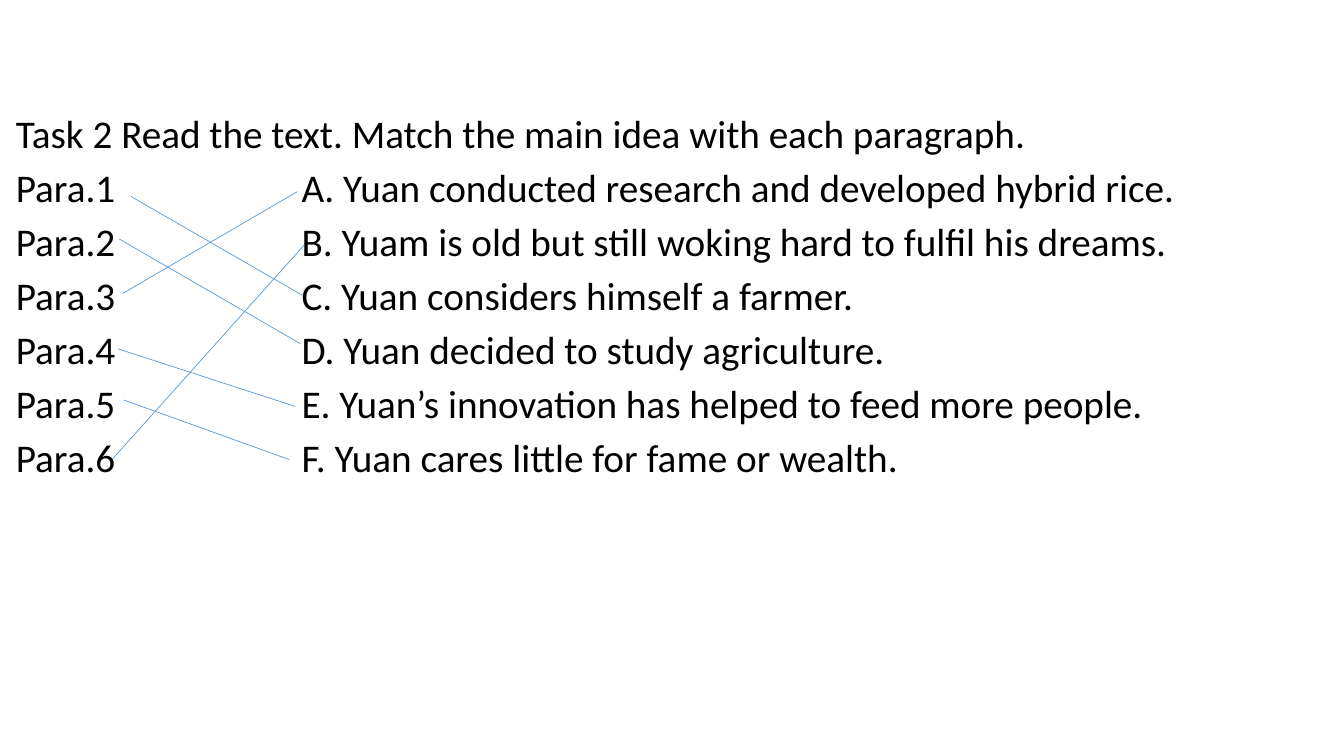
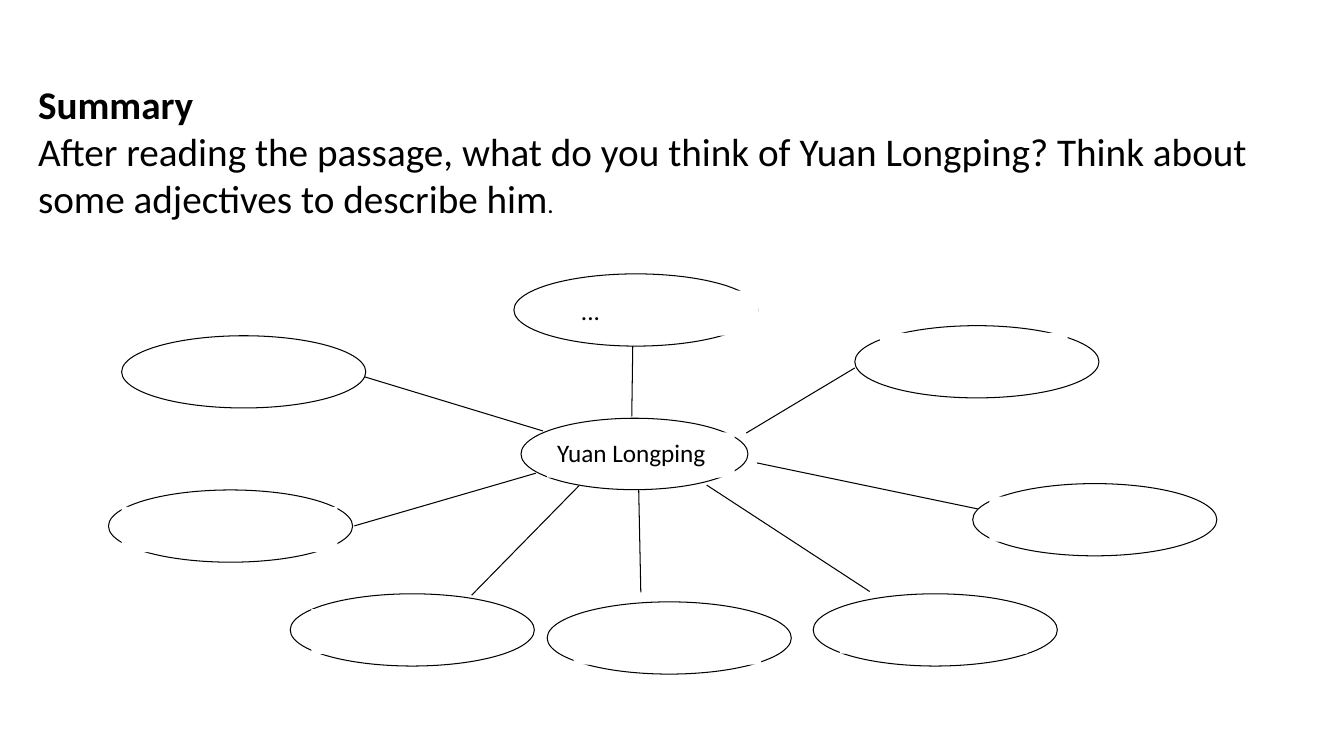
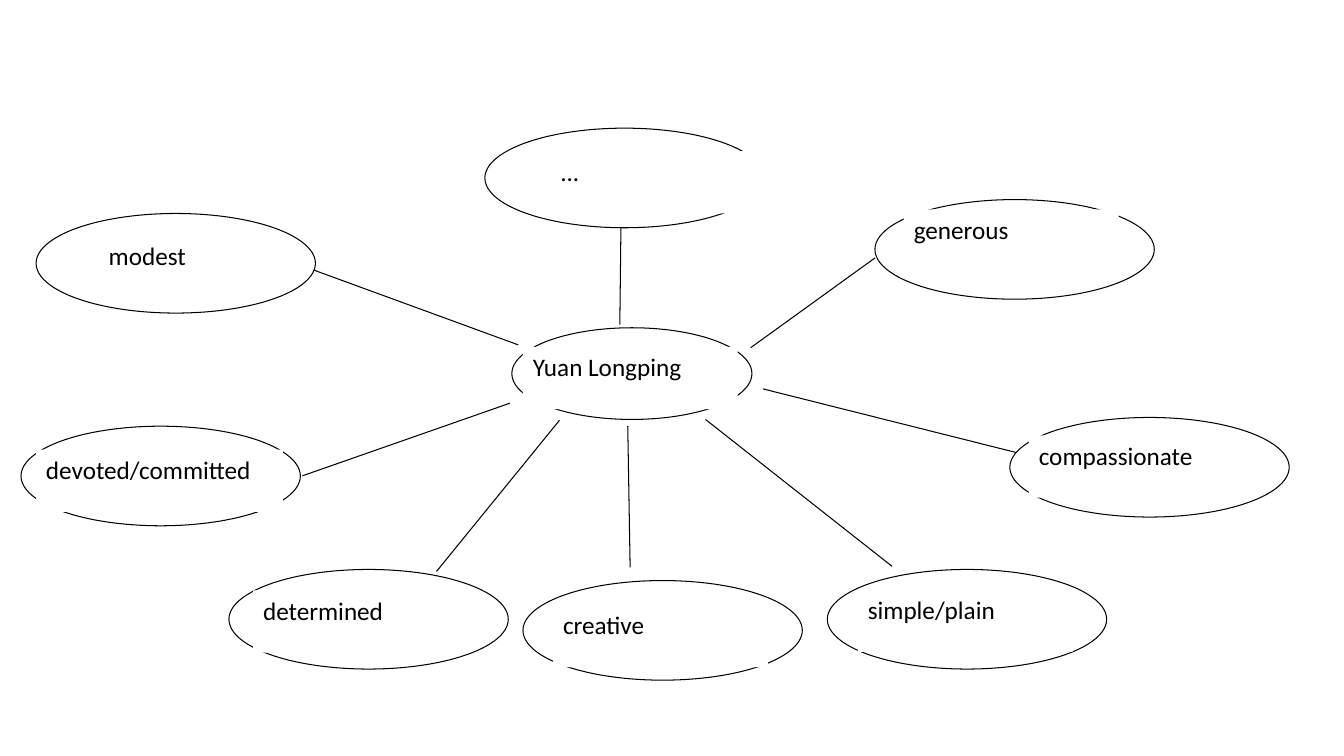
"""Build three lesson slides: a matching task, a blank word web and the completed web."""
import pptx
import pptx.dml.color
import pptx.enum.shapes
import pptx.enum.text
import pptx.oxml
import pptx.oxml.ns
import pptx.util

Cm = pptx.util.Cm
Pt = pptx.util.Pt
BLACK = pptx.dml.color.RGBColor(0x00, 0x00, 0x00)
WHITE = pptx.dml.color.RGBColor(0xFF, 0xFF, 0xFF)
BLUE = pptx.dml.color.RGBColor(0x5B, 0x9B, 0xD5)
DRAWING = pptx.oxml.ns.nsdecls("a")
OVAL = pptx.enum.shapes.MSO_SHAPE.OVAL
RECTANGLE = pptx.enum.shapes.MSO_SHAPE.RECTANGLE

BODY = {"name": "Calibri", "size": Pt(28), "bold": False}
HEADING = BODY | {"bold": True}
LABEL = BODY | {"size": Pt(18)}
TEXT_BOX = {
    "word_wrap": True,
    "auto_size": pptx.enum.text.MSO_AUTO_SIZE.SHAPE_TO_FIT_TEXT,
}
LABEL_FRAME = {"word_wrap": True, "vertical_anchor": pptx.enum.text.MSO_ANCHOR.TOP}


def write(paragraph, text, style):
    """Add a black left-aligned run in the given style."""
    paragraph.alignment = pptx.enum.text.PP_ALIGN.LEFT
    run = paragraph.add_run()
    run.text = text
    run.font.color.rgb = BLACK
    for name, value in style.items():
        setattr(run.font, name, value)


def add_line(slide, ends, color, width):
    """Draw a straight line between two points given in centimetres."""
    line = slide.shapes.add_connector(
        pptx.enum.shapes.MSO_CONNECTOR.STRAIGHT, *[Cm(value) for value in ends]
    )
    line.line.color.rgb = color
    line.line.width = Pt(width)
    line._element.spPr.append(pptx.oxml.parse_xml(f"<a:effectLst {DRAWING}/>"))


presentation = pptx.Presentation()
presentation.slide_width = Cm(33.87)
presentation.slide_height = Cm(19.05)
matching, summary, answers = [
    presentation.slides.add_slide(presentation.slide_layouts[6]) for _ in range(3)
]

ideas = [
    "A. Yuan conducted research and developed hybrid rice.",
    "B. Yuam is old but still woking hard to fulfil his dreams.",
    "C. Yuan considers himself a farmer.",
    "D. Yuan decided to study agriculture.",
    "E. Yuan’s innovation has helped to feed more people.",
    "F. Yuan cares little for fame or wealth.",
]
frame = matching.shapes.add_textbox(Cm(0.15), Cm(2.62), Cm(33.7), Cm(9.7)).text_frame
for name, value in TEXT_BOX.items():
    setattr(frame, name, value)
write(
    frame.paragraphs[0],
    "Task 2 Read the text. Match the main idea with each paragraph.",
    BODY,
)
for number, idea in enumerate(ideas, 1):
    paragraph = frame.add_paragraph()
    paragraph.line_spacing = Pt(38.6)
    write(paragraph, f"Para.{number}\t{idea}", BODY)
    paragraph._p.get_or_add_pPr().append(
        pptx.oxml.parse_xml(
            f'<a:tabLst {DRAWING}><a:tab pos="{Cm(7.2)}" algn="l"/></a:tabLst>'
        )
    )

matches = [
    (3.3, 4.95, 7.62, 7.44),
    (3, 6.02, 7.57, 8.66),
    (3.1, 7.39, 7.49, 4.83),
    (2.97, 8.79, 7.44, 10.24),
    (3.12, 10.08, 7.29, 11.58),
    (2.84, 11.56, 7.67, 6.17),
]
for match in matches:
    add_line(matching, match, BLUE, 0.5)

frame = summary.shapes.add_textbox(Cm(0.71), Cm(1.9), Cm(32.56), Cm(3.84)).text_frame
for name, value in TEXT_BOX.items():
    setattr(frame, name, value)
write(frame.paragraphs[0], "Summary", HEADING)
question = frame.add_paragraph()
write(
    question,
    "After reading the passage, what do you think of Yuan Longping? "
    "Think about some adjectives to describe him",
    BODY,
)
write(question, ".", LABEL)

spokes = [
    (15.62, 8.18, 15.65, 5.56),
    (13.06, 8.69, 7.92, 6.81),
    (12.85, 10.16, 7.62, 11.99),
    (14.1, 10.59, 11, 14.4),
    (15.82, 10.74, 15.88, 14.3),
    (25.6, 11.4, 19.23, 9.8),
    (17.78, 10.57, 22.48, 14.27),
    (22.05, 6.5, 18.92, 8.76),
]
bubbles = [
    (0.91, 5.38),
    (25.45, 10.52),
    (22.05, 5.03),
    (12.22, 3.23),
    (0.53, 10.74),
    (5.77, 14.35),
    (13.18, 14.63),
    (20.85, 14.35),
]
labels = [
    ("Yuan Longping", 13.18, 8.74, 5.41),
    ("modest", 2.49, 5.92, 3.51),
    ("devoted/committed", 0.91, 11.33, 6.22),
    ("determined", 6.38, 14.88, 5.41),
    ("creative", 13.94, 15.24, 5.41),
    ("simple/plain", 21.62, 14.86, 5.41),
    ("compassionate", 25.93, 10.97, 5.41),
    ("generous", 22.78, 5.28, 5.41),
    ("...", 13.87, 3.81, 5.41),
]
webs = [
    (summary, 0.874, 2.27, 0.725, 4.56, (13.13, 10.54, 5.72, 1.8), {"Yuan Longping", "..."}),
    (answers, 1, 0, 1, 0, (12.9, 8.26, 6.05, 2.31), {label[0] for label in labels}),
]
for slide, scale_x, shift_x, scale_y, shift_y, hub, shown in webs:
    for x1, y1, x2, y2 in spokes:
        ends = (
            x1 * scale_x + shift_x,
            y1 * scale_y + shift_y,
            x2 * scale_x + shift_x,
            y2 * scale_y + shift_y,
        )
        add_line(slide, ends, BLACK, 0.75)

    parts = [(OVAL, "", *hub)]
    outlines = [(OVAL, "", left, top, 7.04, 2.51) for left, top in bubbles]
    outlines += [(RECTANGLE, text, left, top, width, 1.57) for text, left, top, width in labels]
    for preset, text, left, top, width, height in outlines:
        parts.append((
            preset,
            text,
            left * scale_x + shift_x,
            top * scale_y + shift_y,
            width * scale_x,
            height * scale_y,
        ))

    for preset, text, *box in parts:
        shape = slide.shapes.add_shape(preset, *[Cm(value) for value in box])
        shape.shadow.inherit = False
        shape.fill.solid()
        shape.fill.fore_color.rgb = WHITE
        if preset == OVAL:
            shape.line.color.rgb = BLACK
            shape.line.width = Pt(0.75)
        else:
            shape.line.fill.background()
        if text in shown:
            for name, value in LABEL_FRAME.items():
                setattr(shape.text_frame, name, value)
            write(shape.text_frame.paragraphs[0], text, LABEL)

presentation.save("out.pptx")
